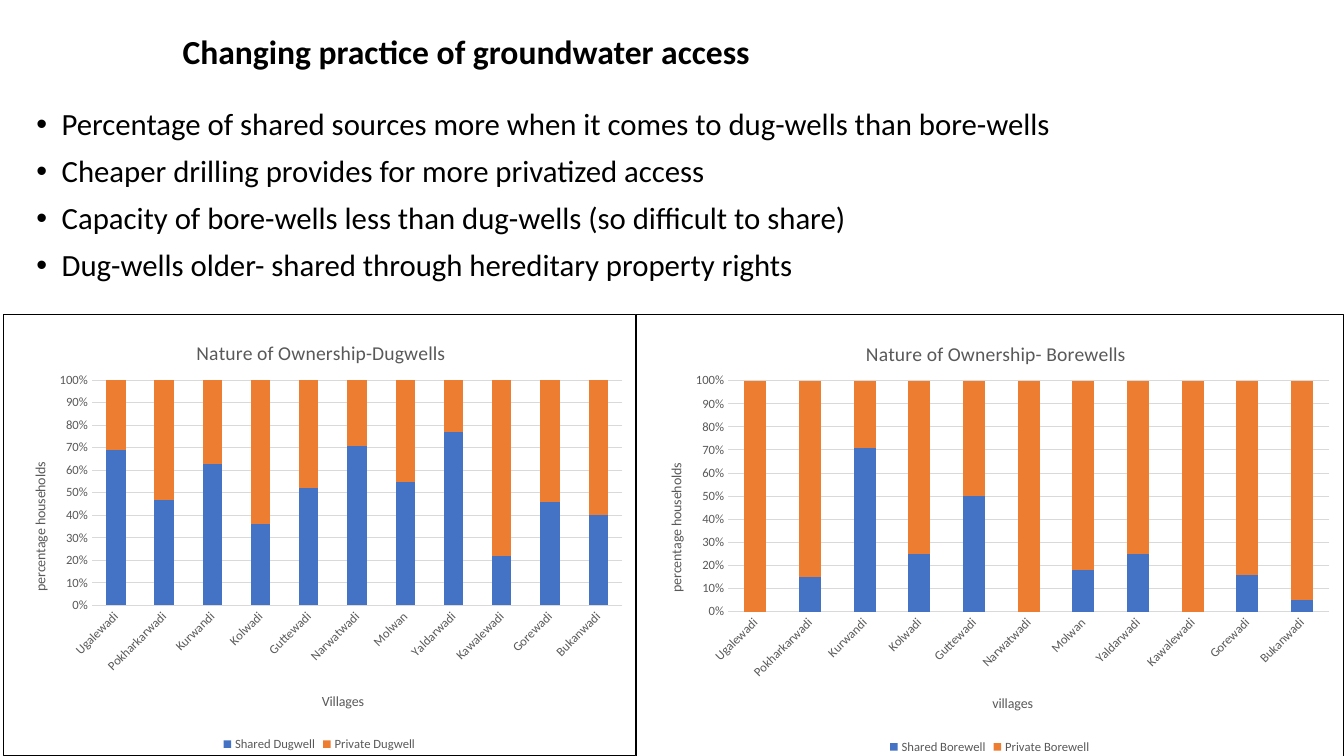
from lxml import etree
from pptx import Presentation
from pptx.chart.data import CategoryChartData
from pptx.dml.color import RGBColor
from pptx.enum.chart import XL_CHART_TYPE as ChartType
from pptx.enum.chart import XL_LEGEND_POSITION as LegendPosition
from pptx.enum.chart import XL_TICK_MARK as TickMark
from pptx.enum.text import MSO_ANCHOR as Anchor
from pptx.enum.text import PP_ALIGN as Align
from pptx.oxml import parse_xml
from pptx.oxml.ns import nsdecls, qn
from pptx.util import Pt

BLACK = RGBColor(0x00, 0x00, 0x00)
GRAY = RGBColor(0x59, 0x59, 0x59)
GRID = RGBColor(0xD9, 0xD9, 0xD9)
BLUE = RGBColor(0x44, 0x72, 0xC4)
ORANGE = RGBColor(0xED, 0x7D, 0x31)
FONT = "Calibri"

BULLETS = [
    "Percentage of shared sources more when it comes to dug-wells than bore-wells",
    "Cheaper drilling provides for more privatized access",
    "Capacity of bore-wells less than dug-wells (so difficult to share)",
    "Dug-wells older- shared through hereditary property rights",
]
VILLAGES = [
    "Ugalewadi", "Pokharkarwadi", "Kurwandi", "Kolwadi", "Guttewadi", "Narwatwadi",
    "Molwan", "Yaldarwadi", "Kawalewadi", "Gorewadi", "Bukanwadi",
]
DUGWELLS = {
    "Shared Dugwell": [69, 47, 63, 36, 52, 71, 55, 77, 22, 46, 40],
    "Private Dugwell": [31, 53, 37, 64, 48, 29, 45, 23, 78, 54, 60],
}
BOREWELLS = {
    "Shared Borewell": [None, 15, 71, 25, 50, None, 18, 25, None, 16, 5],
    "Private Borewell": [100, 85, 29, 75, 50, 100, 82, 75, 100, 84, 95],
}


def style_font(font, size, color, bold=False):
    """Apply the slide typeface with a size, colour and weight."""
    font.name = FONT
    font.size = Pt(size)
    font.bold = bold
    font.color.rgb = color


def add_text(slide, box, lines, size, bold=False):
    """Add a wrapped text box with one paragraph per line and return its frame."""
    frame = slide.shapes.add_textbox(*map(Pt, box)).text_frame
    frame.word_wrap = True
    frame.text = "\n".join(lines)
    for paragraph in frame.paragraphs:
        paragraph.line_spacing = 0.9
        style_font(paragraph.runs[0].font, size, BLACK, bold)
    return frame


def add_heading(slide, box):
    """Add the centred slide heading."""
    frame = add_text(slide, box, ["Changing practice of groundwater access"], 24, True)
    frame.vertical_anchor = Anchor.MIDDLE
    frame.paragraphs[0].alignment = Align.CENTER


def add_bullets(slide, box):
    """Add the bulleted findings."""
    for paragraph in add_text(slide, box, BULLETS, 22).paragraphs:
        paragraph.space_before = Pt(10)
        properties = paragraph._p.get_or_add_pPr()
        properties.set("marL", str(Pt(18)))
        properties.set("indent", str(-Pt(18)))
        etree.SubElement(properties, qn("a:buFont")).set("typeface", "Arial")
        etree.SubElement(properties, qn("a:buChar")).set("char", "•")


def set_layout(element, index, **fractions):
    """Place a chart part by fractions of the chart area."""
    for old in element.findall(qn("c:layout")):
        element.remove(old)
    layout = etree.Element(qn("c:layout"))
    manual = etree.SubElement(layout, qn("c:manualLayout"))
    if "w" in fractions:
        etree.SubElement(manual, qn("c:layoutTarget")).set("val", "inner")
    for mode in ("xMode", "yMode"):
        etree.SubElement(manual, qn(f"c:{mode}")).set("val", "edge")
    for name, value in fractions.items():
        etree.SubElement(manual, qn(f"c:{name}")).set("val", str(value))
    element.insert(index, layout)


def set_title(title, text, size, x, y):
    """Write a chart or axis title and place its top left corner."""
    title.text_frame.text = text
    style_font(title.text_frame.paragraphs[0].runs[0].font, size, GRAY)
    set_layout(title._element, 1, x=x, y=y)


def style_axis(axis, title, x, y):
    """Format an axis and its title."""
    axis.major_tick_mark = axis.minor_tick_mark = TickMark.NONE
    style_font(axis.tick_labels.font, 9, GRAY)
    set_title(axis.axis_title, title, 10, x, y)


def add_ownership_chart(slide, box, title, title_x, villages_title, series, plot):
    """Add a bordered chart of shared and private ownership by village."""
    data = CategoryChartData()
    data.categories = VILLAGES
    for name, values in series.items():
        data.add_series(name, values)
    chart = slide.shapes.add_chart(ChartType.COLUMN_STACKED_100, *map(Pt, box), data).chart
    style_font(chart.font, 10, BLACK)
    set_title(chart.chart_title, title, 14, title_x, 0.05)

    bars = chart.plots[0]
    bars.gap_width, bars.overlap = 150, 100
    bars.vary_by_categories = False
    for bar_series, color in zip(bars.series, (BLUE, ORANGE)):
        bar_series.format.fill.solid()
        bar_series.format.fill.fore_color.rgb = color

    category, value = chart.category_axis, chart.value_axis
    style_axis(category, villages_title, 0.5, 0.85)
    style_axis(value, "percentage households", 0.04, 0.33)
    category._element.find(qn("c:txPr")).find(qn("a:bodyPr")).set("rot", "-2700000")
    value.minimum_scale, value.maximum_scale, value.major_unit = 0, 1, 0.1
    value.tick_labels.number_format = "0%"
    value.tick_labels.number_format_is_linked = False
    value.format.line.fill.background()
    for line in (category.format.line, value.major_gridlines.format.line):
        line.color.rgb = GRID
        line.width = Pt(0.75)

    chart.has_legend = True
    chart.legend.position = LegendPosition.BOTTOM
    chart.legend.include_in_layout = False
    style_font(chart.legend.font, 9, GRAY)

    chart_element = chart._chartSpace.find(qn("c:chart"))
    x, y, width, height = plot
    set_layout(chart_element.find(qn("c:plotArea")), 0, x=x, y=y, w=width, h=height)
    chart_element.addnext(parse_xml(
        f'<c:spPr {nsdecls("c", "a")}><a:noFill/><a:ln w="{Pt(0.75)}">'
        f'<a:solidFill><a:srgbClr val="{BLACK}"/></a:solidFill></a:ln></c:spPr>'
    ))


def main():
    """Build and save the slide."""
    presentation = Presentation()
    presentation.slide_width, presentation.slide_height = Pt(960), Pt(540)
    slide = presentation.slides.add_slide(presentation.slide_layouts[6])
    add_heading(slide, (2, -2, 662, 80))
    add_bullets(slide, (19, 74, 870, 142))
    add_ownership_chart(slide, (2, 224, 452, 316), "Nature of Ownership-Dugwells", 0.3,
                        "Villages", DUGWELLS, (0.14, 0.15, 0.84, 0.51))
    add_ownership_chart(slide, (454, 224, 506, 318), "Nature of Ownership- Borewells", 0.32,
                        "villages", BOREWELLS, (0.13, 0.15, 0.85, 0.52))
    presentation.save("out.pptx")


if __name__ == "__main__":
    main()
